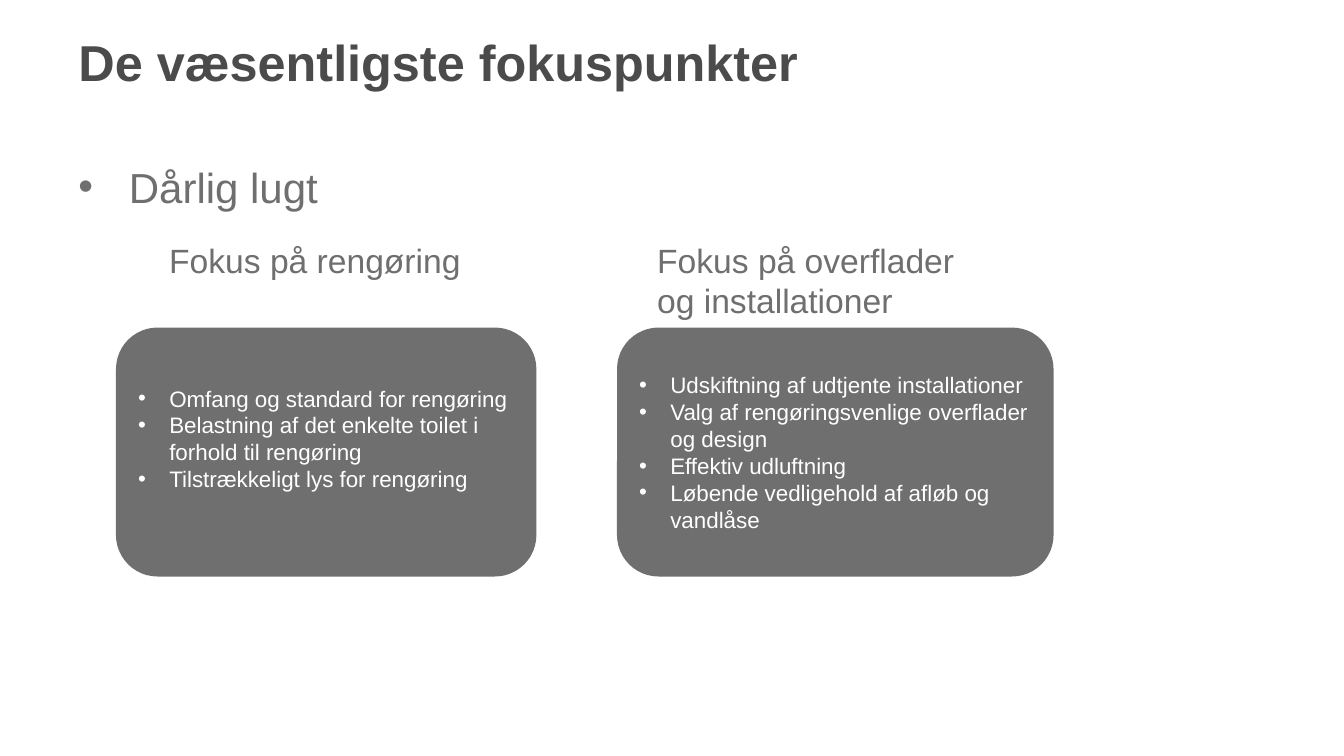
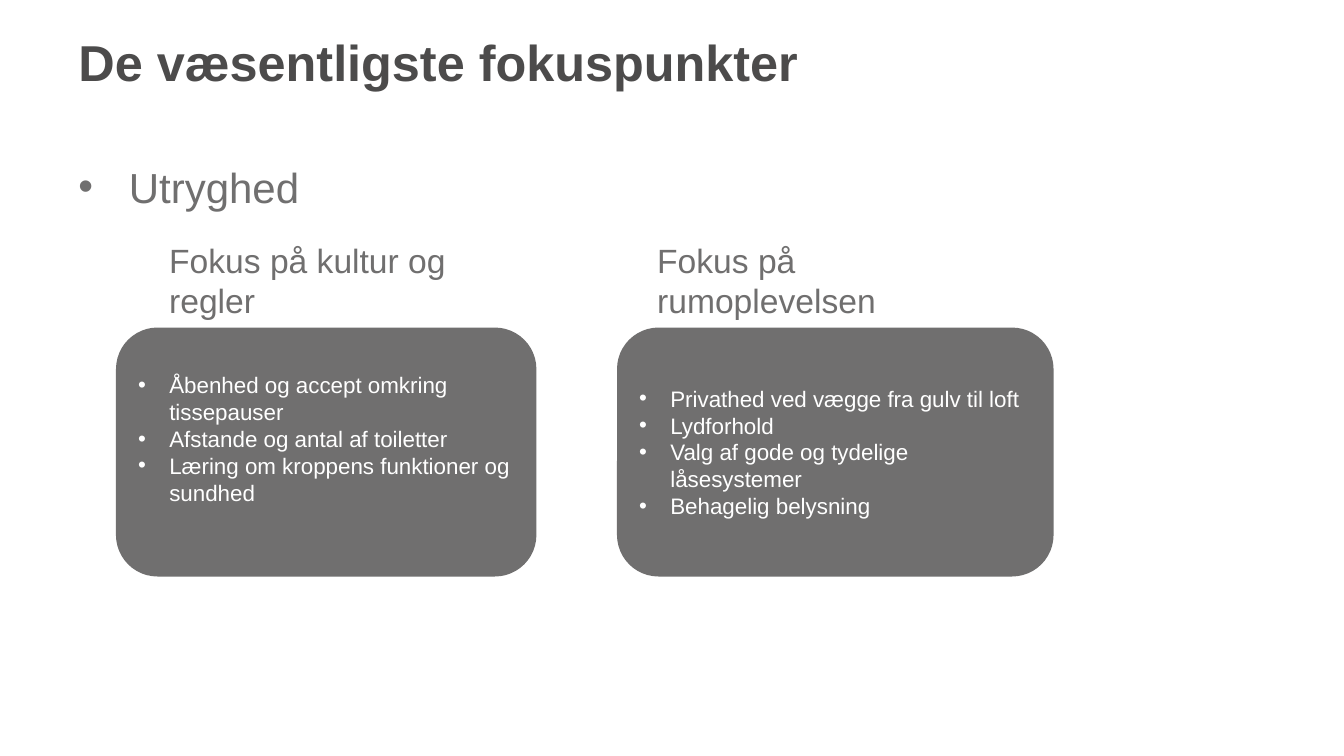
from dataclasses import dataclass
from lxml.etree import SubElement
from pptx import Presentation
from pptx.dml.color import RGBColor
from pptx.enum.shapes import MSO_SHAPE
from pptx.enum.text import MSO_ANCHOR, PP_ALIGN
from pptx.oxml.ns import qn
from pptx.util import Inches, Pt


# Colours and type sizes
@dataclass(frozen=True)
class Theme:
    face: str = "Arial"
    dark: str = "4C4B4B"
    grey: str = "706F6F"
    white: str = "FFFFFF"
    title: int = 36
    topic: int = 30
    head: int = 24
    item: int = 16


# Boxes as shares of the slide, in percent: left, top, width, height
TITLE = (5.1, 2.93, 88.97, 10.27)
TOPIC = (5.1, 20.67, 88.97, 10.53)
HEADS = [(left, 31.07, 25.28, 6.27) for left in (11.85, 48.16)]
CARDS = [(left, 43.33, width, 32.93)
         for left, width in ((8.63, 31.28), (45.91, 32.48))]
# The left card's list sits a little above the middle
FEET = (0.32, 0.05)


def put(target, values):
    for name, value in values.items():
        setattr(target, name, value)


class Deck:
    def __init__(self, theme):
        self.theme = theme
        self.file = Presentation()
        put(self.file, {"slide_width": Inches(13.33),
                        "slide_height": Inches(7.5)})
        self.slide = None

    def page(self):
        self.slide = self.file.slides.add_slide(self.file.slide_layouts[6])

    def place(self, box):
        wide, high = self.file.slide_width, self.file.slide_height
        return [int(share * size / 100)
                for share, size in zip(box, (wide, high, wide, high))]

    def fill(self, shape, lines, size, tint, bold=False, indent=0,
             anchor=MSO_ANCHOR.TOP, foot=0.05):
        frame = shape.text_frame
        put(frame, {"word_wrap": True, "vertical_anchor": anchor,
                    "margin_bottom": Inches(foot)})
        for i, line in enumerate(lines):
            para = frame.add_paragraph() if i else frame.paragraphs[0]
            para.alignment = PP_ALIGN.LEFT
            if indent:
                self.bullet(para, indent)
            run = para.add_run()
            run.text = line
            put(run.font, {"name": self.theme.face, "size": Pt(size),
                           "bold": bold})
            run.font.color.rgb = RGBColor.from_string(tint)

    def bullet(self, para, indent):
        props = para._p.get_or_add_pPr()
        props.set("marL", str(Inches(indent)))
        props.set("indent", str(-Inches(indent)))
        SubElement(props, qn("a:buFont")).set("typeface", self.theme.face)
        SubElement(props, qn("a:buChar")).set("char", "•")

    def text(self, box, line, size, tint, **style):
        shape = self.slide.shapes.add_textbox(*self.place(box))
        self.fill(shape, [line], size, tint, **style)

    def title(self, line):
        self.text(TITLE, line, self.theme.title, self.theme.dark,
                  bold=True, anchor=MSO_ANCHOR.MIDDLE)

    def topic(self, line):
        self.text(TOPIC, line, self.theme.topic, self.theme.grey, indent=0.5)

    def head(self, box, line):
        self.text(box, line, self.theme.head, self.theme.grey)

    def card(self, box, items, foot):
        shape = self.slide.shapes.add_shape(
            MSO_SHAPE.ROUNDED_RECTANGLE, *self.place(box))
        shape.shadow.inherit = False
        shape.fill.solid()
        shape.fill.fore_color.rgb = RGBColor.from_string(self.theme.grey)
        shape.line.fill.background()
        self.fill(shape, items, self.theme.item, self.theme.white,
                  indent=0.31, anchor=MSO_ANCHOR.MIDDLE, foot=foot)


# Topic, then a heading and a list for each column
PAGES = [
    ("Dårlig lugt", [
        ("Fokus på rengøring", [
            "Omfang og standard for rengøring",
            "Belastning af det enkelte toilet i forhold til rengøring",
            "Tilstrækkeligt lys for rengøring"]),
        ("Fokus på overflader og installationer", [
            "Udskiftning af udtjente installationer",
            "Valg af rengøringsvenlige overflader og design",
            "Effektiv udluftning",
            "Løbende vedligehold af afløb og vandlåse"])]),
    ("Utryghed", [
        ("Fokus på kultur og regler", [
            "Åbenhed og accept omkring tissepauser",
            "Afstande og antal af toiletter",
            "Læring om kroppens funktioner og sundhed"]),
        ("Fokus på rumoplevelsen", [
            "Privathed ved vægge fra gulv til loft",
            "Lydforhold",
            "Valg af gode og tydelige låsesystemer",
            "Behagelig belysning"])]),
]


def main():
    deck = Deck(Theme())
    for topic, columns in PAGES:
        deck.page()
        deck.title("De væsentligste fokuspunkter")
        deck.topic(topic)
        for (head, items), top, card, foot in zip(columns, HEADS, CARDS, FEET):
            deck.card(card, items, foot)
            deck.head(top, head)
    deck.file.save("out.pptx")


if __name__ == "__main__":
    main()
